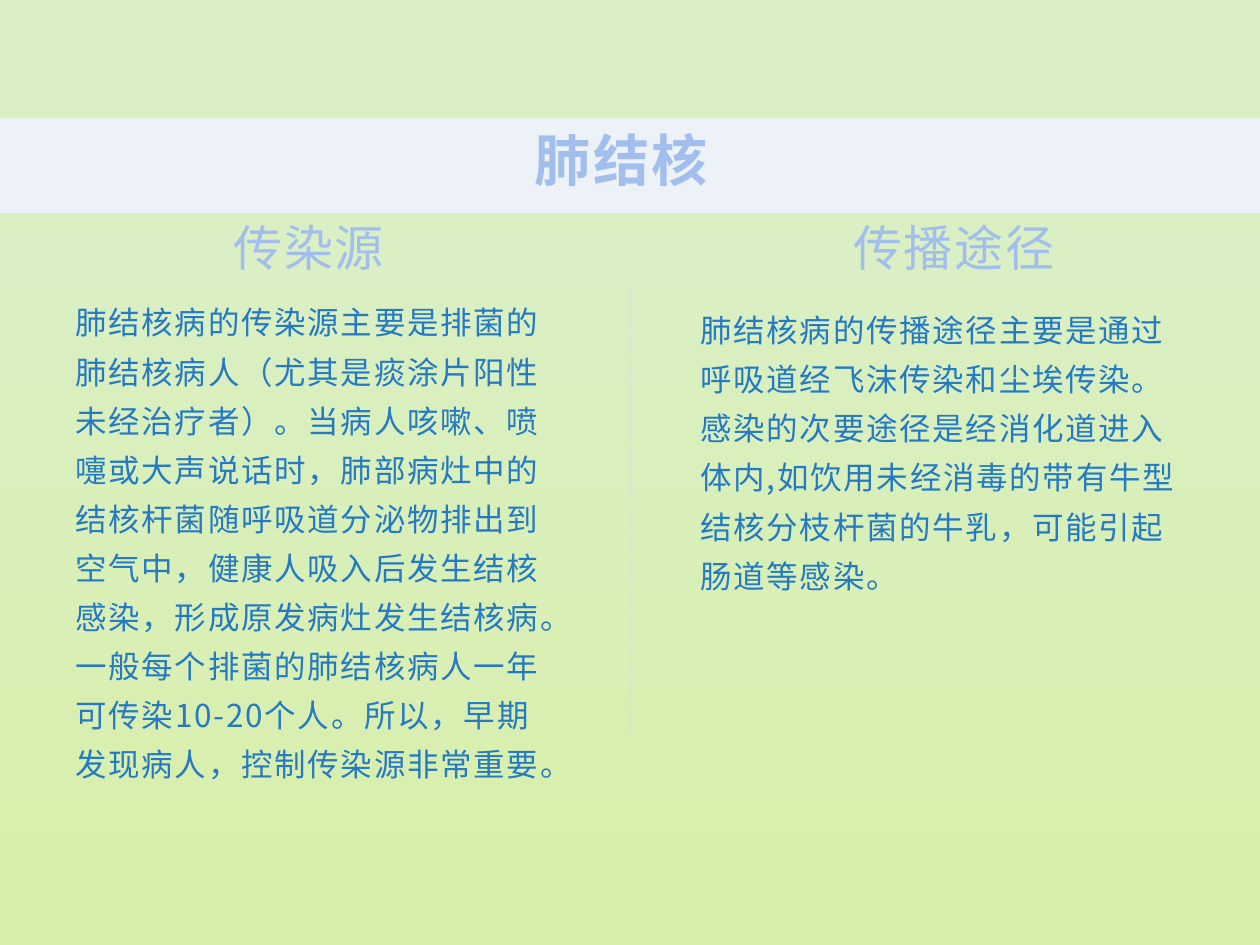
import pptx
import pptx.util
import pptx.dml.color
import pptx.enum.dml
import pptx.enum.shapes
import pptx.enum.text
from lxml import etree
from pptx.util import Inches

RGBColor = pptx.dml.color.RGBColor
PP_ALIGN = pptx.enum.text.PP_ALIGN
MSO_ANCHOR = pptx.enum.text.MSO_ANCHOR

BG_TOP = RGBColor(0xDA, 0xEF, 0xC4)
BG_BOTTOM = RGBColor(0xD8, 0xEF, 0xAB)
BAND = RGBColor(0xED, 0xF2, 0xF9)
BODY = RGBColor(0x25, 0x7A, 0xC1)
HEADING = RGBColor(0xA2, 0xBE, 0xEC)
OUTLINE = RGBColor(0x27, 0x61, 0xBF)
DIVIDER = RGBColor(0xD9, 0xD9, 0xD9)
CJK = "Noto Sans CJK SC"

prs = pptx.Presentation()
prs.slide_width = Inches(10)
prs.slide_height = Inches(7.5)
s = prs.slides.add_slide(prs.slide_layouts[6])


def add_text(text, left, top, width, height, size, color, font=CJK, spacing=1,
             bold=False, outline=None, align=PP_ALIGN.LEFT, line_spacing=None,
             anchor=MSO_ANCHOR.TOP, inset=(0.1, 0.05)):
    sp = s.shapes.add_textbox(Inches(left), Inches(top), Inches(width), Inches(height))
    tf = sp.text_frame
    tf.word_wrap = True
    tf.vertical_anchor = anchor
    tf.margin_left = tf.margin_right = Inches(inset[0])
    tf.margin_top = tf.margin_bottom = Inches(inset[1])
    p = tf.paragraphs[0]
    p.alignment = align
    p.line_spacing = line_spacing
    r = p.add_run()
    r.text = text
    r.font.size = pptx.util.Pt(size)
    r.font.bold = bold
    r.font.name = font
    r.font.color.rgb = color
    rPr = r.font._element
    rPr.set("spc", str(int(spacing * 100)))
    latin = rPr.find(pptx.oxml.ns.qn("a:latin"))
    ea = etree.Element(pptx.oxml.ns.qn("a:ea"), typeface=CJK)
    latin.addnext(ea)
    if outline is not None:
        ln = pptx.oxml.parse_xml(
            f'<a:ln {pptx.oxml.ns.nsdecls("a")} w="{pptx.util.Pt(1.75)}">'
            f'<a:solidFill><a:srgbClr val="{outline}"/></a:solidFill></a:ln>')
        rPr.insert(0, ln)


fill = s.background.fill
fill.gradient()
fill.gradient_angle = 270
for stop, color, position in zip(fill.gradient_stops, (BG_TOP, BG_BOTTOM), (0.25, 0.94)):
    stop.color.rgb = color
    stop.position = position

band = s.shapes.add_shape(pptx.enum.shapes.MSO_SHAPE.RECTANGLE,
                          Inches(0), Inches(0.94), Inches(10), Inches(0.75))
band.shadow.inherit = False
band.fill.solid()
band.fill.fore_color.rgb = BAND
band.line.fill.background()

divider = s.shapes.add_connector(pptx.enum.shapes.MSO_CONNECTOR.STRAIGHT,
                                 Inches(5), Inches(2.27), Inches(5), Inches(5.82))
divider.line.color.rgb = DIVIDER
divider.line.width = pptx.util.Pt(0.5)
divider.line.dash_style = pptx.enum.dml.MSO_LINE.DASH
etree.SubElement(divider._element.spPr, pptx.oxml.ns.qn("a:effectLst"))

columns = [
    ("传染源", 0.43, 0.58,
     "肺结核病的传染源主要是排菌的肺结核病人（尤其是痰涂片阳性未经治疗者）。"
     "当病人咳嗽、喷嚏或大声说话时，肺部病灶中的结核杆菌随呼吸道分泌物排出到空气中，"
     "健康人吸入后发生结核感染，形成原发病灶发生结核病。"
     "一般每个排菌的肺结核病人一年可传染10-20个人。"
     "所以，早期发现病人，控制传染源非常重要。", 0.5, 2.27, 4.23),
    ("传播途径", 5.55, 0.65,
     "肺结核病的传播途径主要是通过呼吸道经飞沫传染和尘埃传染。"
     "感染的次要途径是经消化道进入体内,如饮用未经消毒的带有牛型结核分枝杆菌的牛乳，"
     "可能引起肠道等感染。", 5.46, 2.33, 3.11),
]
for heading, head_left, head_height, body, left, top, height in columns:
    add_text(body, left, top, 4.04, height, 18, BODY, line_spacing=1.3)
    add_text(heading, head_left, 1.68, 4.04, head_height, 28, HEADING,
             outline=OUTLINE, align=PP_ALIGN.CENTER)

add_text("肺结核", 0.43, 0.65, 9, 0.92, 32, HEADING, font="Arial", spacing=1.5,
         bold=True, outline=OUTLINE, align=PP_ALIGN.CENTER,
         anchor=MSO_ANCHOR.BOTTOM, inset=(0.07, 0.04))

prs.save("out.pptx")
